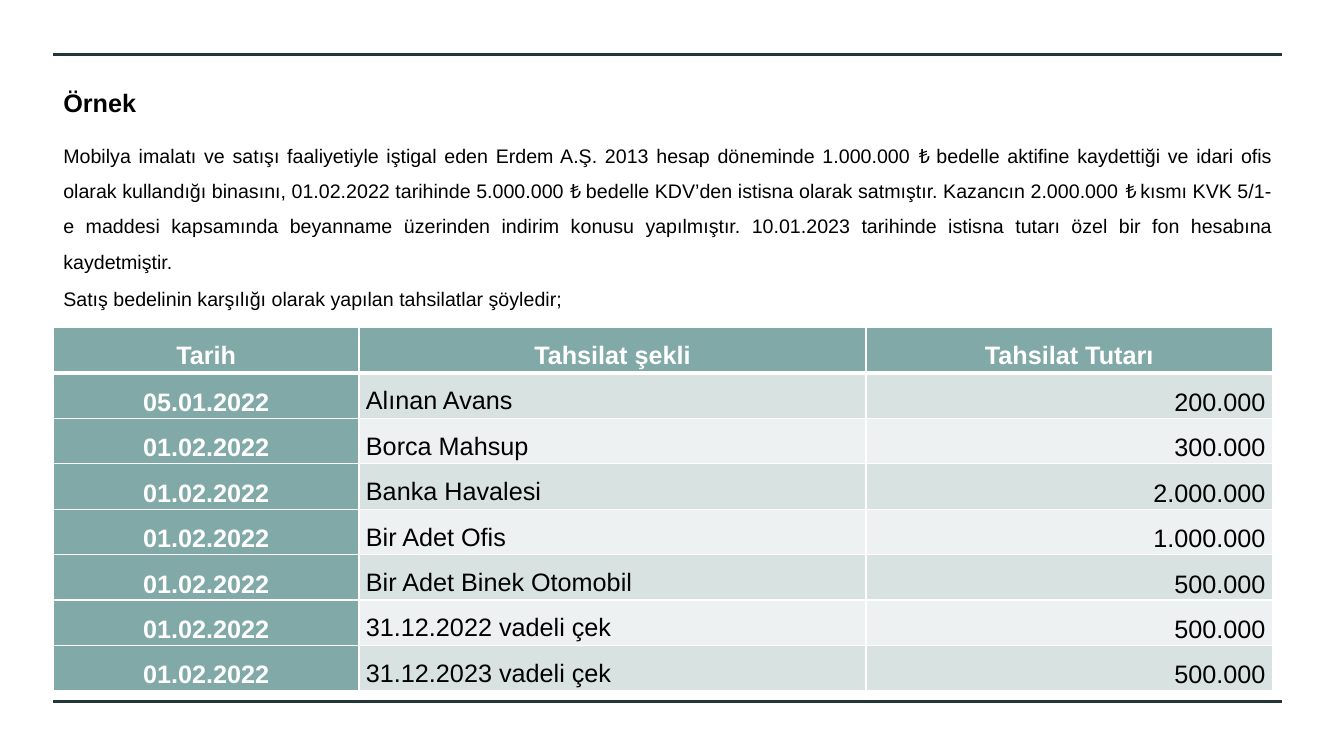
from lxml import etree
from pptx import Presentation
from pptx.dml.color import RGBColor
from pptx.enum.shapes import MSO_CONNECTOR as Connector
from pptx.enum.text import MSO_ANCHOR as Anchor, PP_ALIGN as Align
from pptx.oxml import parse_xml
from pptx.oxml.ns import nsdecls, qn
from pptx.util import Inches, Pt

BLACK, WHITE, RULE = "000000", "FFFFFF", "21373A"
TEAL, BANDS = "80A9A7", ("D8E2E1", "EDF1F1")
LEFT = 0.53

HEADING = "Örnek"
STORY = (
    "Mobilya imalatı ve satışı faaliyetiyle iştigal eden Erdem A.Ş. 2013 hesap "
    "döneminde 1.000.000 ₺ bedelle aktifine kaydettiği ve idari ofis olarak "
    "kullandığı binasını, 01.02.2022 tarihinde 5.000.000 ₺ bedelle KDV’den istisna "
    "olarak satmıştır. Kazancın 2.000.000 ₺ kısmı KVK 5/1-e maddesi kapsamında "
    "beyanname üzerinden indirim konusu yapılmıştır. 10.01.2023 tarihinde istisna "
    "tutarı özel bir fon hesabına kaydetmiştir."
)
LEAD_IN = "Satış bedelinin karşılığı olarak yapılan tahsilatlar şöyledir;"
HEADER = ("Tarih", "Tahsilat şekli", "Tahsilat Tutarı")
PAYMENTS = (
    ("05.01.2022", "Alınan Avans", "200.000"),
    ("01.02.2022", "Borca Mahsup", "300.000"),
    ("01.02.2022", "Banka Havalesi", "2.000.000"),
    ("01.02.2022", "Bir Adet Ofis", "1.000.000"),
    ("01.02.2022", "Bir Adet Binek Otomobil", "500.000"),
    ("01.02.2022", "31.12.2022 vadeli çek", "500.000"),
    ("01.02.2022", "31.12.2023 vadeli çek", "500.000"),
)
COLUMN_WIDTHS = (3.03, 5.03, 4.03)
COLUMN_ALIGNS = (Align.CENTER, Align.JUSTIFY, Align.RIGHT)
ROW_HEIGHT = 0.43


def color(hex_code):
    """Return the colour for a hex string."""
    return RGBColor.from_string(hex_code)


def write(para, text, size, align, hex_code=BLACK, bold=False, spacing=1.0):
    """Fill a paragraph with one formatted run."""
    para.alignment, para.line_spacing = align, spacing
    span = para.add_run()
    span.text = text
    span.font.name, span.font.size, span.font.bold = "Arial", Pt(size), bold
    span.font.color.rgb = color(hex_code)


def add_rule(page, top):
    """Draw a horizontal rule across the page."""
    rule = page.shapes.add_connector(
        Connector.STRAIGHT, Inches(LEFT), Inches(top), Inches(12.72), Inches(top)
    )
    rule.line.color.rgb, rule.line.width = color(RULE), Pt(2.25)
    etree.SubElement(rule._element.spPr, qn("a:effectLst"))


def add_body(page):
    """Add the heading and the text of the example."""
    box = page.shapes.add_textbox(Inches(LEFT), Inches(0.82), Inches(12.2), Inches(5.88))
    frame = box.text_frame
    frame.word_wrap = True
    rows = ((HEADING, 18, True, 1.0), (STORY, 14, False, 1.5), (LEAD_IN, 14, False, 1.0))
    for index, (text, size, bold, spacing) in enumerate(rows):
        para = frame.add_paragraph() if index else frame.paragraphs[0]
        para.space_before = Pt(10)
        write(para, text, size, Align.JUSTIFY, bold=bold, spacing=spacing)


def set_borders(cell, top, bottom):
    """Give a cell white borders with the given top and bottom widths."""
    sides = (("lnL", 1), ("lnR", 1), ("lnT", top), ("lnB", bottom))
    for index, (side, width) in enumerate(sides):
        border = parse_xml(
            f'<a:{side} {nsdecls("a")} w="{Pt(width)}"><a:solidFill>'
            f'<a:srgbClr val="{WHITE}"/></a:solidFill></a:{side}>'
        )
        cell._tc.get_or_add_tcPr().insert(index, border)


def fill_cell(cell, text, row, column):
    """Write and format one cell by its place in the table."""
    header = row == 0
    strong = header or column == 0
    cell.margin_left = cell.margin_right = Inches(0.07)
    cell.margin_top = cell.margin_bottom = 0
    cell.vertical_anchor = Anchor.TOP if header or column == 1 else Anchor.MIDDLE
    cell.fill.solid()
    cell.fill.fore_color.rgb = color(TEAL if strong else BANDS[(row - 1) % 2])
    set_borders(cell, 3 if row == 1 else 1, 3 if header else 1)
    align = Align.CENTER if header else COLUMN_ALIGNS[column]
    write(cell.text_frame.paragraphs[0], text, 18, align,
          WHITE if strong else BLACK, strong, 1.5)


def add_payments(page):
    """Add the table of payments."""
    rows = (HEADER, *PAYMENTS)
    table = page.shapes.add_table(
        len(rows), len(HEADER), Inches(LEFT), Inches(3.25),
        Inches(sum(COLUMN_WIDTHS)), Inches(ROW_HEIGHT * len(rows)),
    ).table
    for column, width in zip(table.columns, COLUMN_WIDTHS):
        column.width = Inches(width)
    for row, texts in enumerate(rows):
        table.rows[row].height = Inches(ROW_HEIGHT)
        for column, text in enumerate(texts):
            fill_cell(table.cell(row, column), text, row, column)


def main():
    """Build and save the deck."""
    deck = Presentation()
    deck.slide_width, deck.slide_height = Inches(13.33), Inches(7.5)
    page = deck.slides.add_slide(deck.slide_layouts[6])
    for top in (0.54, 6.96):
        add_rule(page, top)
    add_body(page)
    add_payments(page)
    deck.save("out.pptx")


if __name__ == "__main__":
    main()
